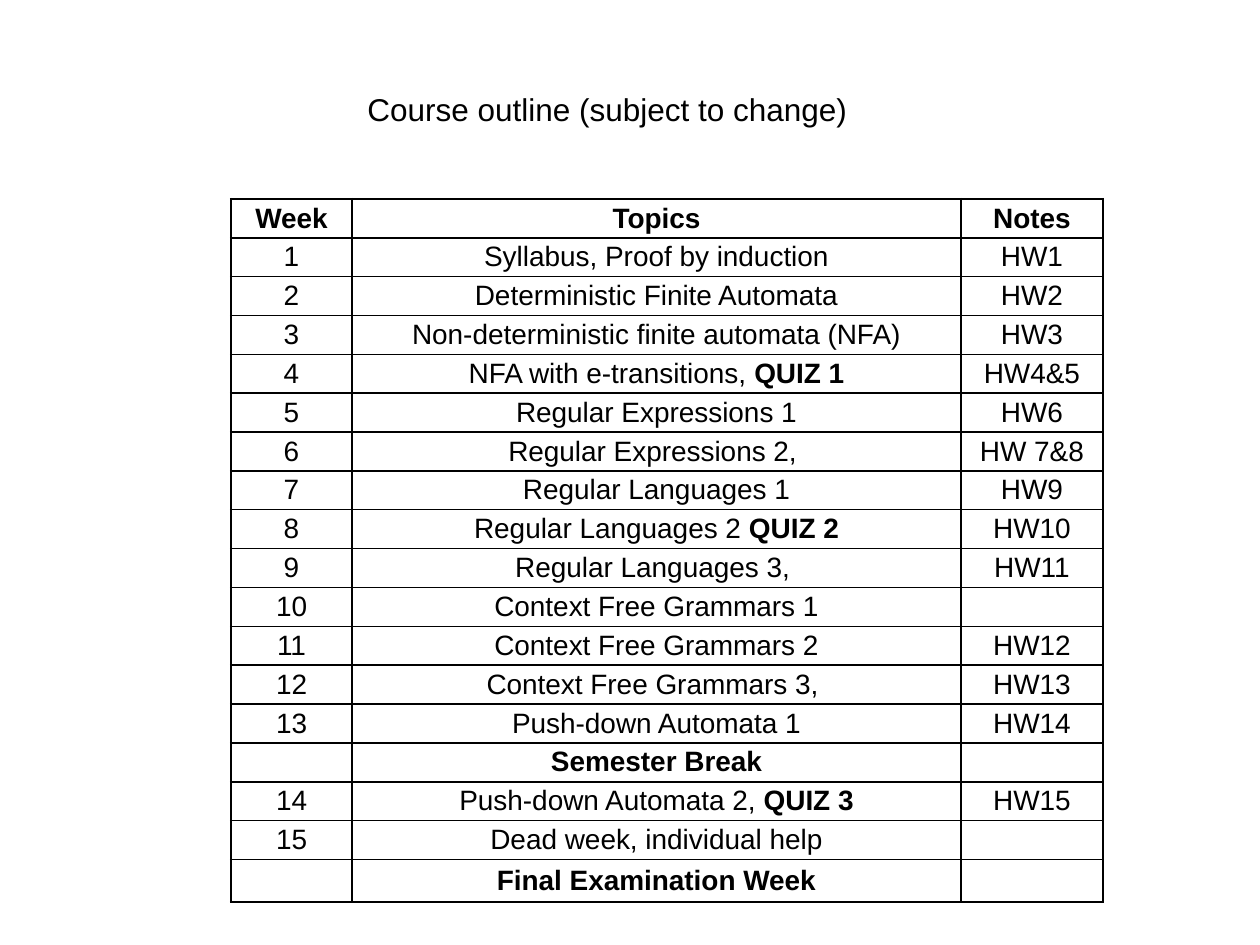
from dataclasses import dataclass

from lxml.etree import SubElement
from pptx import Presentation
from pptx.dml.color import RGBColor
from pptx.enum.text import MSO_ANCHOR, PP_ALIGN
from pptx.oxml.ns import qn
from pptx.util import Pt


@dataclass(frozen=True)
class Theme:
    face: str = "Arial"
    ink: str = "000000"
    title: int = 18
    body: int = 16
    thin: float = 1
    thick: float = 1.5


class Deck:
    SCALE = 914400 / 126

    def __init__(self, theme):
        self.theme = theme
        self.show = Presentation()
        self.show.slide_width = self.emu(1260)
        self.show.slide_height = self.emu(945)
        self.slide = self.show.slides.add_slide(self.show.slide_layouts[6])

    def emu(self, px):
        return round(px * self.SCALE)

    def text(self, frame, words, size, align):
        para = frame.paragraphs[0]
        para.alignment = align
        para.font.name = self.theme.face
        para.font.size = Pt(size)
        para.font.color.rgb = RGBColor.from_string(self.theme.ink)
        for index, part in enumerate(words.split("|")):
            if part:
                run = para.add_run()
                run.text = part
                run.font.bold = index % 2 == 1

    def label(self, words, *box):
        shape = self.slide.shapes.add_textbox(*map(self.emu, box))
        shape.text_frame.word_wrap = True
        self.text(shape.text_frame, words, self.theme.title, PP_ALIGN.LEFT)

    def border(self, cell, side, heavy):
        width = self.theme.thick if heavy else self.theme.thin
        props = cell._tc.get_or_add_tcPr()
        line = SubElement(props, qn(f"a:ln{side}"), w=str(Pt(width)))
        fill = SubElement(line, qn("a:solidFill"))
        SubElement(fill, qn("a:srgbClr"), val=self.theme.ink)

    def cell(self, cell, words, heavy):
        for side in "LRTB":
            self.border(cell, side, side in heavy)
        cell.fill.background()
        cell.vertical_anchor = MSO_ANCHOR.MIDDLE
        cell.margin_left = cell.margin_right = self.emu(3)
        cell.margin_top = cell.margin_bottom = self.emu(1)
        self.text(cell.text_frame, words, self.theme.body, PP_ALIGN.CENTER)

    def table(self, rows, left, top, widths, body, last, rules):
        size = len(rows), len(widths)
        box = left, top, sum(widths), body + last
        grid = self.slide.shapes.add_table(*size, *map(self.emu, box)).table
        grid.first_row = grid.horz_banding = False
        for column, width in zip(grid.columns, widths):
            column.width = self.emu(width)
        for row in grid.rows:
            row.height = self.emu(body) // (len(rows) - 1)
        grid.rows[len(rows) - 1].height = self.emu(last)
        for y, row in enumerate(rows):
            for x, words in enumerate(row):
                edges = {
                    "L": x == 0,
                    "R": x == len(widths) - 1,
                    "T": y in rules,
                    "B": y + 1 in rules,
                }
                heavy = [side for side, on in edges.items() if on]
                self.cell(grid.cell(y, x), words, heavy)


ROWS = [
    ("|Week", "|Topics", "|Notes"),
    ("1", "Syllabus, Proof by induction", "HW1"),
    ("2", "Deterministic Finite Automata", "HW2"),
    ("3", "Non-deterministic finite automata (NFA)", "HW3"),
    ("4", "NFA with e-transitions, |QUIZ 1", "HW4&5"),
    ("5", "Regular Expressions 1", "HW6"),
    ("6", "Regular Expressions 2, ", "HW 7&8"),
    ("7", "Regular Languages 1", "HW9"),
    ("8", "Regular Languages 2 |QUIZ 2", "HW10"),
    ("9", "Regular Languages 3, ", "HW11"),
    ("10", "Context Free Grammars 1", ""),
    ("11", "Context Free Grammars 2", "HW12"),
    ("12", "Context Free Grammars 3, ", "HW13"),
    ("13", "Push-down Automata 1", "HW14"),
    ("", "|Semester Break", ""),
    ("14", "Push-down Automata 2, |QUIZ 3", "HW15"),
    ("15", "Dead week, individual help", ""),
    ("", "|Final Examination Week", ""),
]


def main():
    deck = Deck(Theme())
    deck.label("Course outline (subject to change)", 355, 84, 582, 50)
    deck.table(ROWS, 231, 199, (121, 609, 142), 661, 43, {0, 1, 15, 18})
    deck.show.save("out.pptx")


if __name__ == "__main__":
    main()
